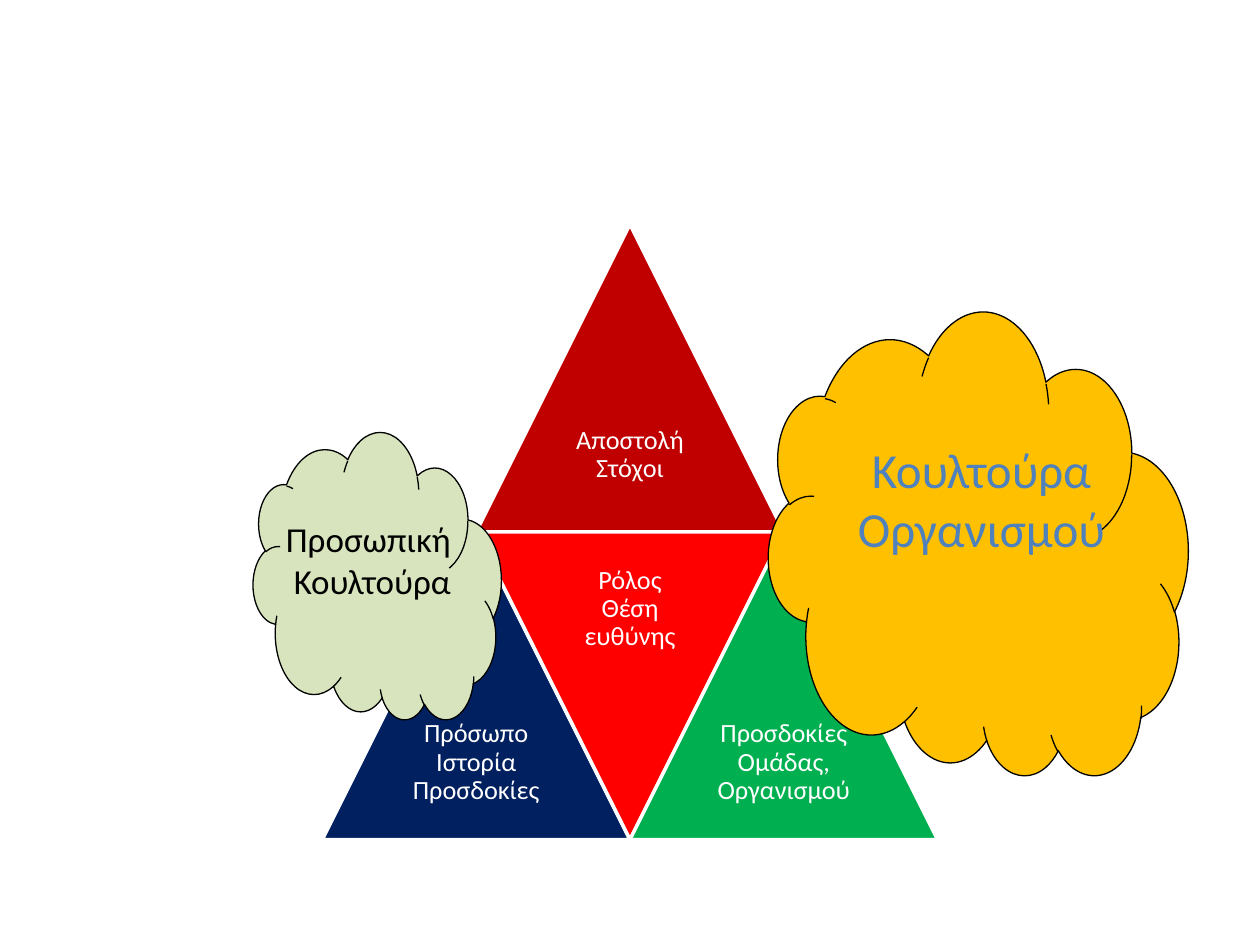
"""Build a slide of four role triangles flanked by two culture clouds."""
import pptx
import pptx.dml.color
import pptx.enum.shapes
import pptx.enum.text
import pptx.util

Pt = pptx.util.Pt
RGBColor = pptx.dml.color.RGBColor
Shapes = pptx.enum.shapes.MSO_SHAPE

WHITE = RGBColor(0xFF, 0xFF, 0xFF)
BLACK = RGBColor(0x00, 0x00, 0x00)
CRIMSON = RGBColor(0xC0, 0x00, 0x00)
NAVY = RGBColor(0x00, 0x20, 0x60)
RED = RGBColor(0xFF, 0x00, 0x00)
GREEN = RGBColor(0x00, 0xB0, 0x50)
AMBER = RGBColor(0xFF, 0xC0, 0x00)
SAGE = RGBColor(0xD7, 0xE4, 0xBD)
BLUE = RGBColor(0x4F, 0x81, 0xBD)

deck = pptx.Presentation()
deck.slide_width, deck.slide_height = Pt(720), Pt(540)
page = deck.slides.add_slide(deck.slide_layouts[6])


def add_figure(kind, bounds, fill, line, width):
    figure = page.shapes.add_shape(kind, *map(Pt, bounds))
    figure.shadow.inherit = False
    figure.fill.solid()
    figure.fill.fore_color.rgb = fill
    figure.line.color.rgb = line
    figure.line.width = Pt(width)
    return figure


def add_text(text, *, bounds, size, color, spacing=1.0, inset=None, middle=False):
    frame = page.shapes.add_textbox(*map(Pt, bounds)).text_frame
    frame.word_wrap = True
    if middle:
        frame.vertical_anchor = pptx.enum.text.MSO_ANCHOR.MIDDLE
    if inset is not None:
        frame.margin_left = frame.margin_right = Pt(inset)
        frame.margin_top = frame.margin_bottom = Pt(inset)
    frame.text = text
    for para in frame.paragraphs:
        para.alignment = pptx.enum.text.PP_ALIGN.CENTER
        para.line_spacing = spacing
        for span in para.runs:
            span.font.name = "Calibri"
            span.font.size = Pt(size)
            span.font.color.rgb = color


SIDE = 175.8
HALF = SIDE / 2
CENTER, TOP = 360, 128.2

# column in half sides from the center, row, color, rotation, label
triangles = [
    (-1, 0, CRIMSON, 0, "Αποστολή Στόχοι"),
    (-2, 1, NAVY, 0, "Πρόσωπο Ιστορία Προσδοκίες"),
    (-1, 1, RED, 180, "Ρόλος\vΘέση ευθύνης"),
    (0, 1, GREEN, 0, "Προσδοκίες Ομάδας, Οργανισμού"),
]
for column, row, color, rotation, label in triangles:
    left, top = CENTER + column * HALF, TOP + row * SIDE
    triangle = add_figure(Shapes.ISOSCELES_TRIANGLE, (left, top, SIDE, SIDE), color, WHITE, 2)
    triangle.rotation = rotation
    label_top = top if rotation else top + HALF
    add_text(label, bounds=(left + HALF / 2, label_top, HALF, HALF), size=15,
             color=WHITE, spacing=0.9, inset=4.5, middle=True)

clouds = [
    ((439.2, 179.2, 239.8, 265), AMBER, "Κουλτούρα\nΟργανισμού", (473, 247.7, 175.7, 75), 28, BLUE),
    ((144.7, 247.7, 141.8, 164.2), SAGE, "Προσωπική \nΚουλτούρα", (139, 292.3, 147.6, 55.4), 20, BLACK),
]
for bounds, fill, caption, caption_bounds, size, color in clouds:
    cloud = add_figure(Shapes.CLOUD, bounds, fill, BLACK, 0.75)
    cloud.element.spPr.xfrm.set("flipV", "1")
    add_text(caption, bounds=caption_bounds, size=size, color=color)

deck.save("out.pptx")
